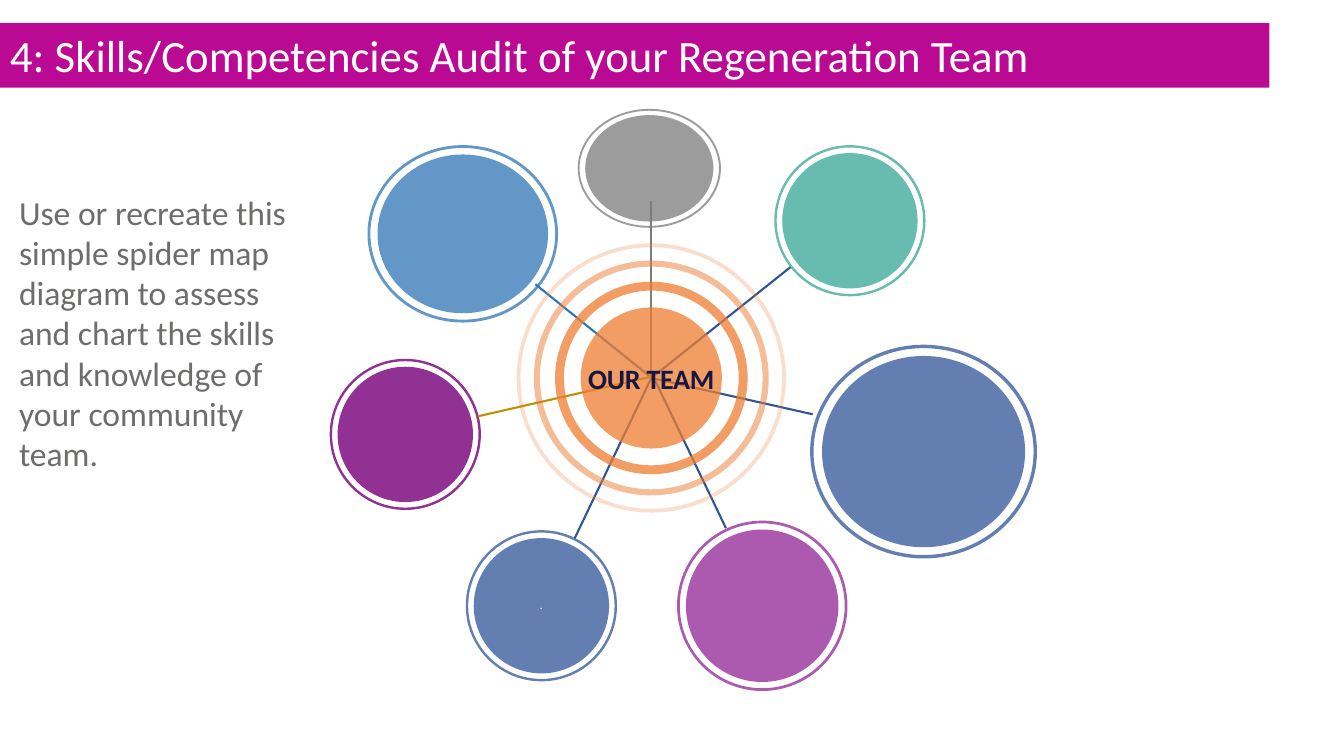
from dataclasses import dataclass

from lxml import etree
from pptx import Presentation
from pptx.dml.color import RGBColor
from pptx.enum.shapes import MSO_CONNECTOR, MSO_SHAPE
from pptx.enum.text import MSO_ANCHOR, PP_ALIGN
from pptx.oxml.ns import qn
from pptx.util import Inches, Pt

OVAL, DONUT, RECT = MSO_SHAPE.OVAL, MSO_SHAPE.DONUT, MSO_SHAPE.RECTANGLE
STRAIGHT = MSO_CONNECTOR.STRAIGHT
TOP, MIDDLE = MSO_ANCHOR.TOP, MSO_ANCHOR.MIDDLE
LEFT, CENTER = PP_ALIGN.LEFT, PP_ALIGN.CENTER


@dataclass(frozen=True)
class Theme:
    font: str = "Calibri"
    title_size: float = 32
    body_size: float = 24
    hub_size: float = 20
    dot_size: float = 8
    line_width: float = 1.5
    white: str = "FFFFFF"
    magenta: str = "BA0A94"
    body: str = "6D6E6C"
    navy: str = "161741"
    gray: str = "7C7C7C"
    teal: str = "68BBAF"
    blue: str = "2F5597"
    orchid: str = "AB5AB0"
    purple: str = "903193"
    sky: str = "2E75B6"
    gold: str = "BF9000"
    orange: str = "ED7D31"


@dataclass(frozen=True)
class Bubble:
    cx: float
    cy: float
    w: float
    h: float
    color: str
    alpha: int = 100
    text: str = ""


@dataclass(frozen=True)
class Spoke:
    x1: float
    y1: float
    x2: float
    y2: float
    color: str


@dataclass(frozen=True)
class Ring:
    size: float
    band: float
    alpha: int


T = Theme()
DISC_RATIO, BUBBLE_BAND = 0.895, 0.016
HUB_X, HUB_Y, HUB_SIZE = 6.46, 3.75, 1.4

BUBBLES = [
    Bubble(6.44, 1.67, 1.42, 1.18, T.gray, 75),
    Bubble(8.43, 2.19, 1.5, 1.5, T.teal),
    Bubble(9.16, 4.48, 2.25, 2.12, T.blue, 75),
    Bubble(7.56, 6.01, 1.69, 1.69, T.orchid),
    Bubble(5.37, 6.01, 1.5, 1.5, T.blue, 75, "."),
    Bubble(4.02, 4.31, 1.5, 1.5, T.purple),
    Bubble(4.59, 2.32, 1.89, 1.76, T.sky, 75),
]
SPOKES = [
    Spoke(6.46, 1.99, 6.46, 3.77, T.gray),
    Spoke(7.84, 2.65, 6.46, 3.75, T.blue),
    Spoke(5.31, 2.82, 6.44, 3.73, T.sky),
    Spoke(4.74, 4.13, 6.45, 3.74, T.gold),
    Spoke(8.06, 4.11, 6.46, 3.75, T.blue),
    Spoke(7.2, 5.24, 6.5, 3.78, T.blue),
    Spoke(5.7, 5.34, 6.46, 3.75, T.blue),
]
RINGS = [Ring(1.91, 0.046, 75), Ring(2.33, 0.026, 50), Ring(2.67, 0.014, 25)]


def add_filled(shapes, kind, x: float, y: float, w: float, h: float,
               color: str, alpha: int = 100):
    """Add a borderless shape with a plain or translucent fill."""
    sp = shapes.add_shape(kind, Inches(x), Inches(y), Inches(w), Inches(h))
    sp.shadow.inherit = False
    sp.line.fill.background()
    sp.fill.solid()
    sp.fill.fore_color.rgb = RGBColor.from_string(color)
    if alpha < 100:
        clr = sp._element.spPr.find(qn("a:solidFill"))[0]
        etree.SubElement(clr, qn("a:alpha"), val=str(alpha * 1000))
    return sp


def add_round(shapes, kind, cx: float, cy: float, w: float, h: float,
              color: str, alpha: int, band: float = 0):
    """Add a disc or ring around a centre point."""
    sp = add_filled(shapes, kind, cx - w / 2, cy - h / 2, w, h, color, alpha)
    if band:
        sp.adjustments[0] = band
    return sp


def set_text(sp, text: str, size: float, color: str, align=LEFT, anchor=TOP,
             wrap: bool = True, bold: bool = False, spacing: int = 0) -> None:
    tf = sp.text_frame
    for name, value in {"word_wrap": wrap, "vertical_anchor": anchor}.items():
        setattr(tf, name, value)
    p = tf.paragraphs[0]
    p.alignment = align
    r = p.add_run()
    r.text = text
    for name, value in {"name": T.font, "size": Pt(size), "bold": bold}.items():
        setattr(r.font, name, value)
    r.font.color.rgb = RGBColor.from_string(color)
    if spacing:
        r._r.get_or_add_rPr().set("spc", str(spacing))


def add_bubble(s, b: Bubble) -> None:
    shapes = s.shapes.add_group_shape().shapes
    disc = add_round(shapes, OVAL, b.cx, b.cy, b.w * DISC_RATIO,
                     b.h * DISC_RATIO, b.color, b.alpha)
    if b.text:
        for side in ("left", "top", "right", "bottom"):
            setattr(disc.text_frame, f"margin_{side}", 0)
        set_text(disc, b.text, T.dot_size, T.white, CENTER, MIDDLE, spacing=-20)
        disc.text_frame.paragraphs[0].line_spacing = 0.95
    add_round(shapes, DONUT, b.cx, b.cy, b.w, b.h, b.color, b.alpha, BUBBLE_BAND)


def add_spoke(s, k: Spoke) -> None:
    ends = [Inches(v) for v in (k.x1, k.y1, k.x2, k.y2)]
    line = s.shapes.add_connector(STRAIGHT, *ends)
    line.line.width = Pt(T.line_width)
    line.line.color.rgb = RGBColor.from_string(k.color)
    etree.SubElement(line._element.spPr, qn("a:effectLst"))


def add_textbox(shapes, x: float, y: float, w: float, h: float):
    return shapes.add_textbox(Inches(x), Inches(y), Inches(w), Inches(h))


def main() -> None:
    prs = Presentation()
    prs.slide_width, prs.slide_height = Inches(13.33), Inches(7.5)
    s = prs.slides.add_slide(prs.slide_layouts[6])

    # Skill bubbles and their spokes
    for b in BUBBLES:
        add_bubble(s, b)
    for k in SPOKES:
        add_spoke(s, k)

    # Hub with concentric rings and label
    add_round(s.shapes, OVAL, HUB_X, HUB_Y, HUB_SIZE, HUB_SIZE, T.orange, 75)
    hub = s.shapes.add_group_shape().shapes
    for ring in RINGS:
        add_round(hub, DONUT, HUB_X, HUB_Y, ring.size, ring.size,
                  T.orange, ring.alpha, ring.band)
    label = add_textbox(hub, 5.73, 3.53, 1.46, 0.44)
    set_text(label, "OUR TEAM", T.hub_size, T.navy, CENTER, MIDDLE,
             wrap=False, bold=True, spacing=-20)

    # Instructions
    intro = add_textbox(s.shapes, 0.09, 1.85, 3.01, 3.33)
    set_text(intro, "Use or recreate this simple spider map diagram to assess "
             "and chart the skills and knowledge of your community team.",
             T.body_size, T.body)

    # Title band
    band = add_filled(s.shapes, RECT, 0, 0.23, 12.59, 0.64, T.magenta)
    set_text(band, "4: Skills/Competencies Audit of your Regeneration Team",
             T.title_size, T.white)

    prs.save("out.pptx")


if __name__ == "__main__":
    main()
